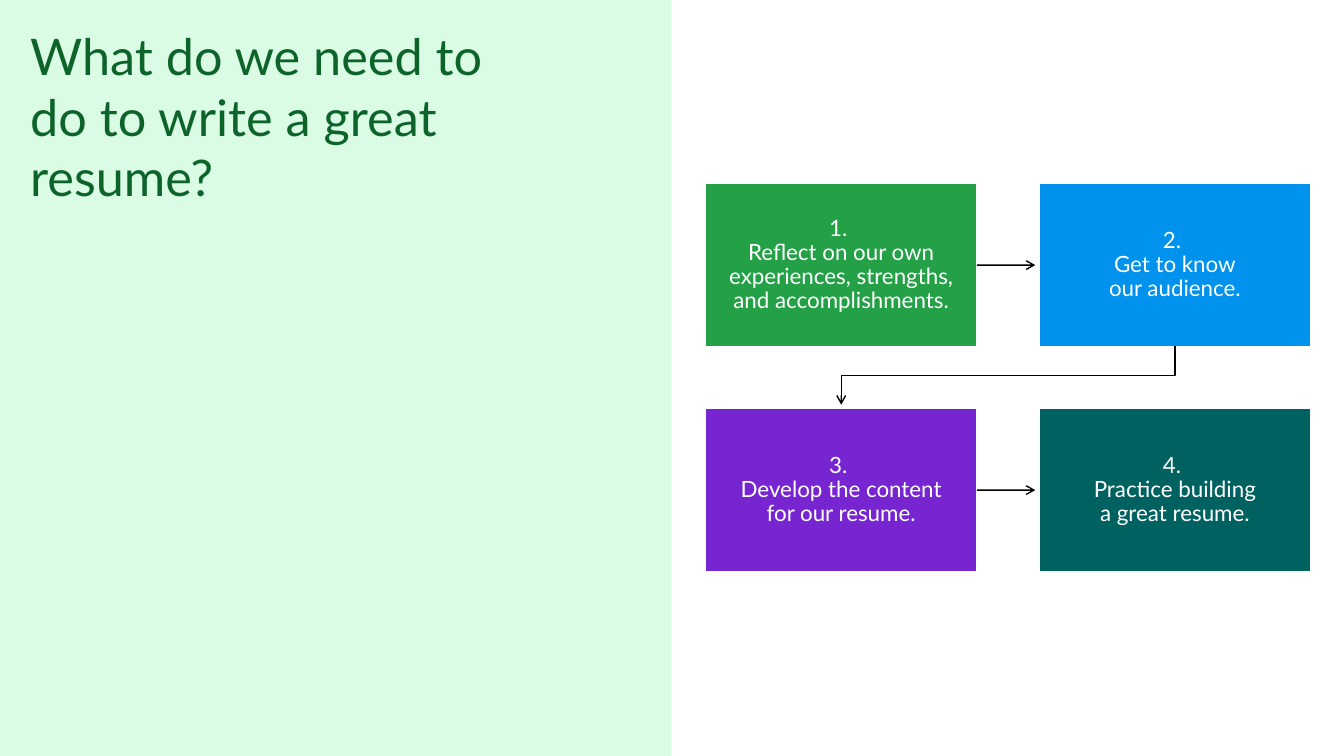
from copy import deepcopy

from lxml import etree
from pptx import Presentation
from pptx import util as u
from pptx.dml.color import RGBColor
from pptx.enum import shapes, text
from pptx.oxml.ns import qn

Cm, Pt = u.Cm, u.Pt
COLORS = {
    "panel": "DAFBE4", "title": "0D642A", "white": "FFFFFF", "arrow": "000000",
    "green": "24A147", "blue": "0092ED", "purple": "7724D1", "teal": "006161",
}
STEPS = [
    ("1. \nReflect on our own experiences, strengths, and accomplishments.", "green"),
    ("2. \nGet to know\nour audience.", "blue"),
    ("3. \nDevelop the content\nfor our resume.", "purple"),
    ("4. \nPractice building\na great resume.", "teal"),
]


def rgb(name):
    return RGBColor.from_string(COLORS[name])


def write(tf, content, *, size, color, align, anchor, spacing=1.0, insets=(0.25, 0.13)):
    """Fill a text frame with one paragraph; newlines become line breaks."""
    tf.word_wrap = True
    tf.auto_size = text.MSO_AUTO_SIZE.NONE
    tf.vertical_anchor = anchor
    tf.margin_left = tf.margin_right = Cm(insets[0])
    tf.margin_top = tf.margin_bottom = Cm(insets[1])
    p = tf.paragraphs[0]
    p.text = content
    p.alignment, p.line_spacing = align, spacing
    for r in p.runs:
        r.font.name, r.font.size = "Lato", Pt(size)
        r.font.color.rgb = rgb(color)
    # Line breaks take the size of the runs
    for br in p._p.findall(qn("a:br")):
        br.insert(0, deepcopy(p.runs[0]._r.find(qn("a:rPr"))))


def add_rect(s, x, y, w, h, color):
    sp = s.shapes.add_shape(shapes.MSO_SHAPE.RECTANGLE, Cm(x), Cm(y), Cm(w), Cm(h))
    sp.shadow.inherit = False
    sp.fill.solid()
    sp.fill.fore_color.rgb = rgb(color)
    sp.line.fill.background()
    return sp


def add_arrow(s, kind, x1, y1, x2, y2):
    c = s.shapes.add_connector(kind, Cm(x1), Cm(y1), Cm(x2), Cm(y2))
    c.line.color.rgb = rgb("arrow")
    c.line.width = Pt(1)
    etree.SubElement(c.line._get_or_add_ln(), qn("a:tailEnd"), type="arrow")
    etree.SubElement(c._element.spPr, qn("a:effectLst"))
    return c


def add_elbow_down(s, x1, y1, x2, y2):
    """Elbow arrow going down, across to the left and down again."""
    cx, cy = (x1 + x2) / 2, (y1 + y2) / 2
    half_w, half_h = (x1 - x2) / 2, (y2 - y1) / 2
    c = add_arrow(s, shapes.MSO_CONNECTOR.ELBOW,
                  cx - half_h, cy - half_w, cx + half_h, cy + half_w)
    c._element.spPr.find(qn("a:xfrm")).set("rot", str(90 * 60000))


def title_panel(s, x, y, w, h):
    panel = add_rect(s, x, y, w, h, "panel")
    s.shapes._spTree.insert(2, panel._element)  # behind the title
    title = s.shapes.title
    title.left, title.top = Cm(x + 0.51), Cm(y + 0.51)
    title.width, title.height = Cm(12.24), Cm(4.88)
    write(title.text_frame, "What do we need to do to write a great resume?",
          size=36, color="title", align=text.PP_ALIGN.LEFT,
          anchor=text.MSO_ANCHOR.TOP)


def step_flow(s, x, y, w, h, gap=1.57, clearance=0.1):
    box_w, box_h = (w - gap) / 2, (h - gap) / 2
    boxes = []
    for i, (content, color) in enumerate(STEPS):
        row, col = divmod(i, 2)
        sp = add_rect(s, x + col * (box_w + gap), y + row * (box_h + gap),
                      box_w, box_h, color)
        sp.line.color.rgb = rgb("white")
        sp.line.width = Pt(1)
        write(sp.text_frame, content, size=16, color="white",
              align=text.PP_ALIGN.CENTER, anchor=text.MSO_ANCHOR.MIDDLE,
              spacing=0.9, insets=(0.33, 0.36))
        boxes.append(sp)

    # Arrows across each row, stopping just short of the next box
    for row in range(2):
        mid = y + row * (box_h + gap) + box_h / 2
        c = add_arrow(s, shapes.MSO_CONNECTOR.STRAIGHT,
                      x + box_w, mid, x + box_w + gap - clearance, mid)
        c.begin_connect(boxes[2 * row], 3)

    # Arrow from the end of the first row to the start of the second
    add_elbow_down(s, x + w - box_w / 2, y + box_h,
                   x + box_w / 2, y + box_h + gap - clearance)


def main():
    prs = Presentation()
    prs.slide_width, prs.slide_height = Cm(33.87), Cm(19.05)
    s = prs.slides.add_slide(prs.slide_layouts[5])
    title_panel(s, 0, 0, 16.92, 19.05)
    step_flow(s, 17.78, 4.63, 15.25, 9.77)
    prs.save("out.pptx")


if __name__ == "__main__":
    main()
